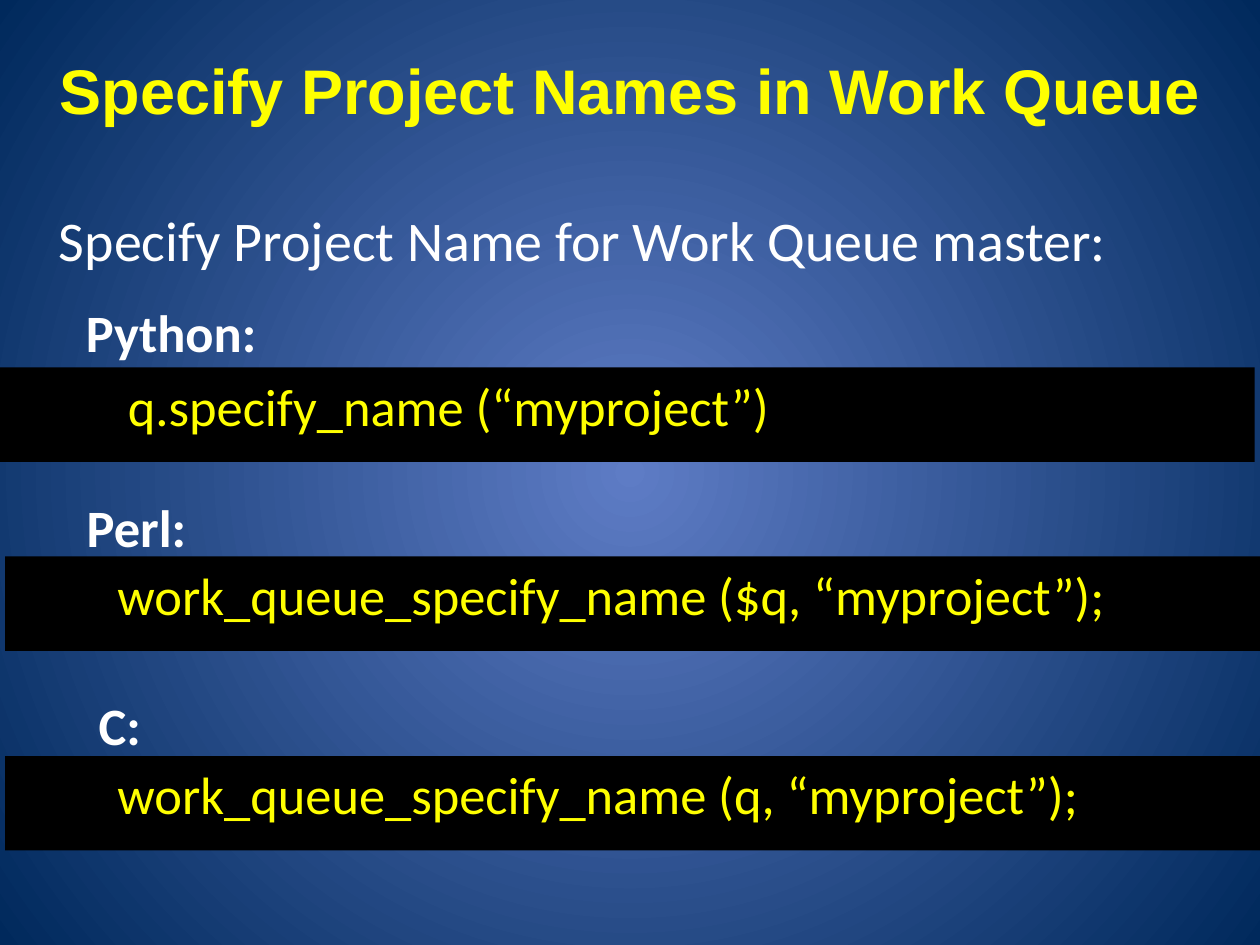
from lxml import etree
from pptx import Presentation
from pptx.dml.color import RGBColor
from pptx.enum import shapes, text
from pptx.oxml.ns import qn
from pptx.util import Pt

WHITE, YELLOW, BLACK = "FFFFFF", "FFFF00", "000000"
CENTER_COLOR, EDGE_COLOR = "5E7CC5", "00295C"
BAR_WIDTH, BAR_HEIGHT = 717, 54
LABEL_WIDTH, LABEL_HEIGHT, CODE_HEIGHT = 258, 43, 47.5

EXAMPLES = [
    ("Python:", 42, 168, "q.specify_name (“myproject”)", 66, 485, 0, 210),
    ("Perl:", 42.5, 279.5, "work_queue_specify_name ($q, “myproject”);", 60, 660, 3, 318),
    ("C:", 49.25, 392.5, "work_queue_specify_name (q, “myproject”);", 60, 636, 3, 432),
]


def color(value):
    return RGBColor.from_string(value)


def paint_background(page):
    fill = page.background.fill
    fill.gradient()
    for stop, position, value in zip(fill.gradient_stops, (0, 1), (CENTER_COLOR, EDGE_COLOR)):
        stop.position = position
        stop.color.rgb = color(value)
    gradient = page.element.find(".//" + qn("a:gradFill"))
    for line in gradient.findall(qn("a:lin")):
        gradient.remove(line)
    circle = etree.SubElement(gradient, qn("a:path"), path="circle")
    etree.SubElement(circle, qn("a:fillToRect"), l="50000", t="50000", r="50000", b="50000")


def place(box, left, top, width, height):
    box.left, box.top, box.width, box.height = Pt(left), Pt(top), Pt(width), Pt(height)


def write(box, words, size, value, font="Calibri", bold=False):
    frame = box.text_frame
    frame.text = words
    frame.word_wrap = True
    frame.auto_size = text.MSO_AUTO_SIZE.NONE
    frame.vertical_anchor = text.MSO_ANCHOR.TOP
    span = frame.paragraphs[0].runs[0]
    span.font.name = font
    span.font.size = Pt(size)
    span.font.bold = bold
    span.font.color.rgb = color(value)


def remove_bullet(para):
    properties = para._p.get_or_add_pPr()
    properties.set("marL", "0")
    properties.set("indent", "0")
    etree.SubElement(properties, qn("a:buNone"))


def add_bar(page, left, top):
    bar = page.shapes.add_shape(
        shapes.MSO_SHAPE.RECTANGLE, Pt(left), Pt(top), Pt(BAR_WIDTH), Pt(BAR_HEIGHT))
    bar.shadow.inherit = False
    bar.fill.solid()
    bar.fill.fore_color.rgb = color(BLACK)
    bar.line.fill.background()


def add_text(page, words, left, top, width, height, value, bold=False):
    box = page.shapes.add_textbox(Pt(left), Pt(top), Pt(width), Pt(height))
    write(box, words, 30, value, bold=bold)


def main():
    deck = Presentation()
    deck.slide_width, deck.slide_height = Pt(720), Pt(540)
    page = deck.slides.add_slide(deck.slide_layouts[1])
    paint_background(page)

    title = page.shapes.title
    place(title, 0, 26, 720, 107)
    write(title, "Specify Project Names in Work Queue", 36, YELLOW, "Arial", True)
    title.text_frame.paragraphs[0].alignment = text.PP_ALIGN.CENTER

    body = page.placeholders[1]
    place(body, 26.5, 114, 681, 56)
    write(body, "Specify Project Name for Work Queue master:", 32, WHITE)
    remove_bullet(body.text_frame.paragraphs[0])

    for label, label_left, label_top, code, code_left, code_width, bar_left, bar_top in EXAMPLES:
        add_bar(page, bar_left, bar_top)
        add_text(page, label, label_left, label_top, LABEL_WIDTH, LABEL_HEIGHT, WHITE, True)
        add_text(page, code, code_left, bar_top, code_width, CODE_HEIGHT, YELLOW)

    deck.save("out.pptx")


if __name__ == "__main__":
    main()
